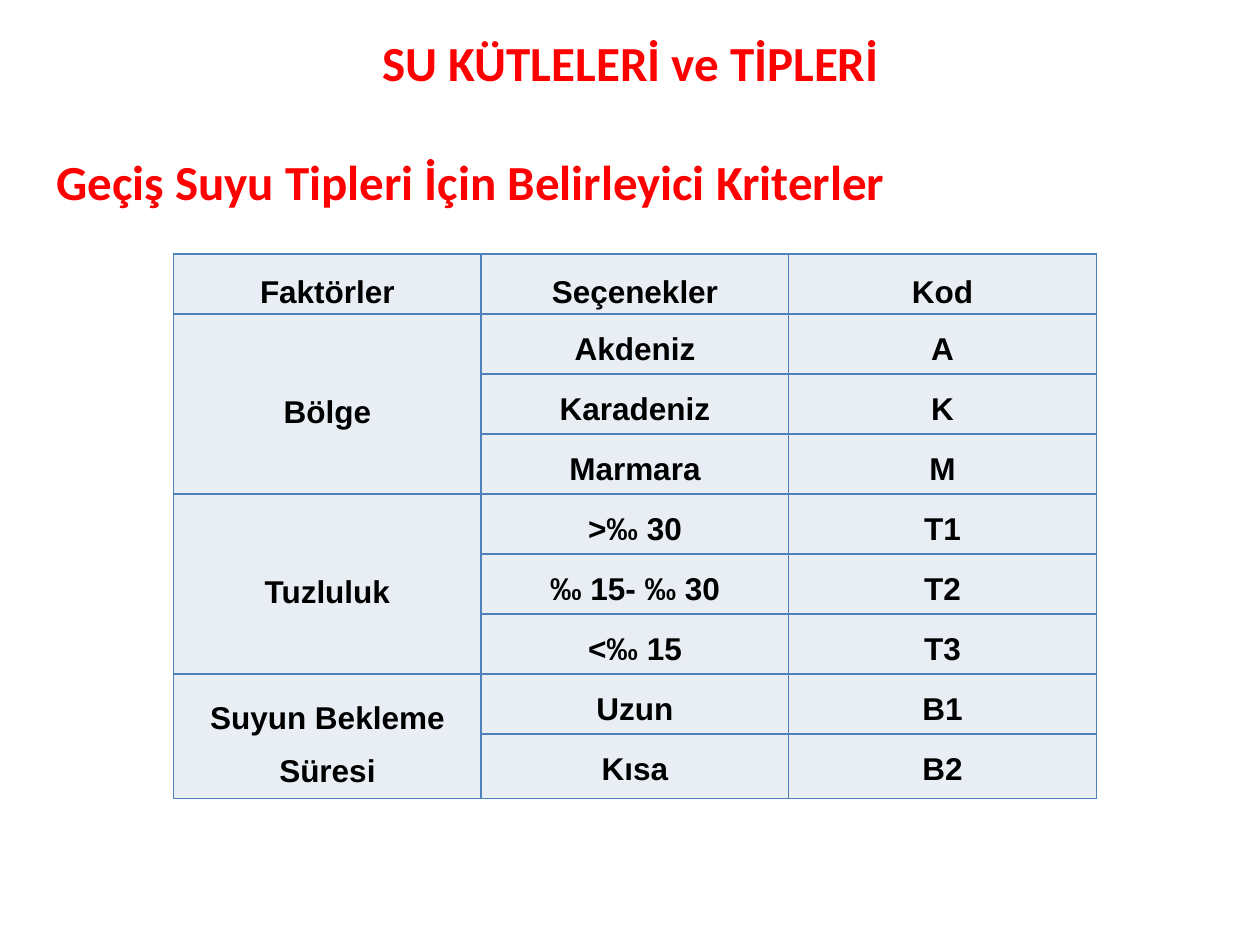
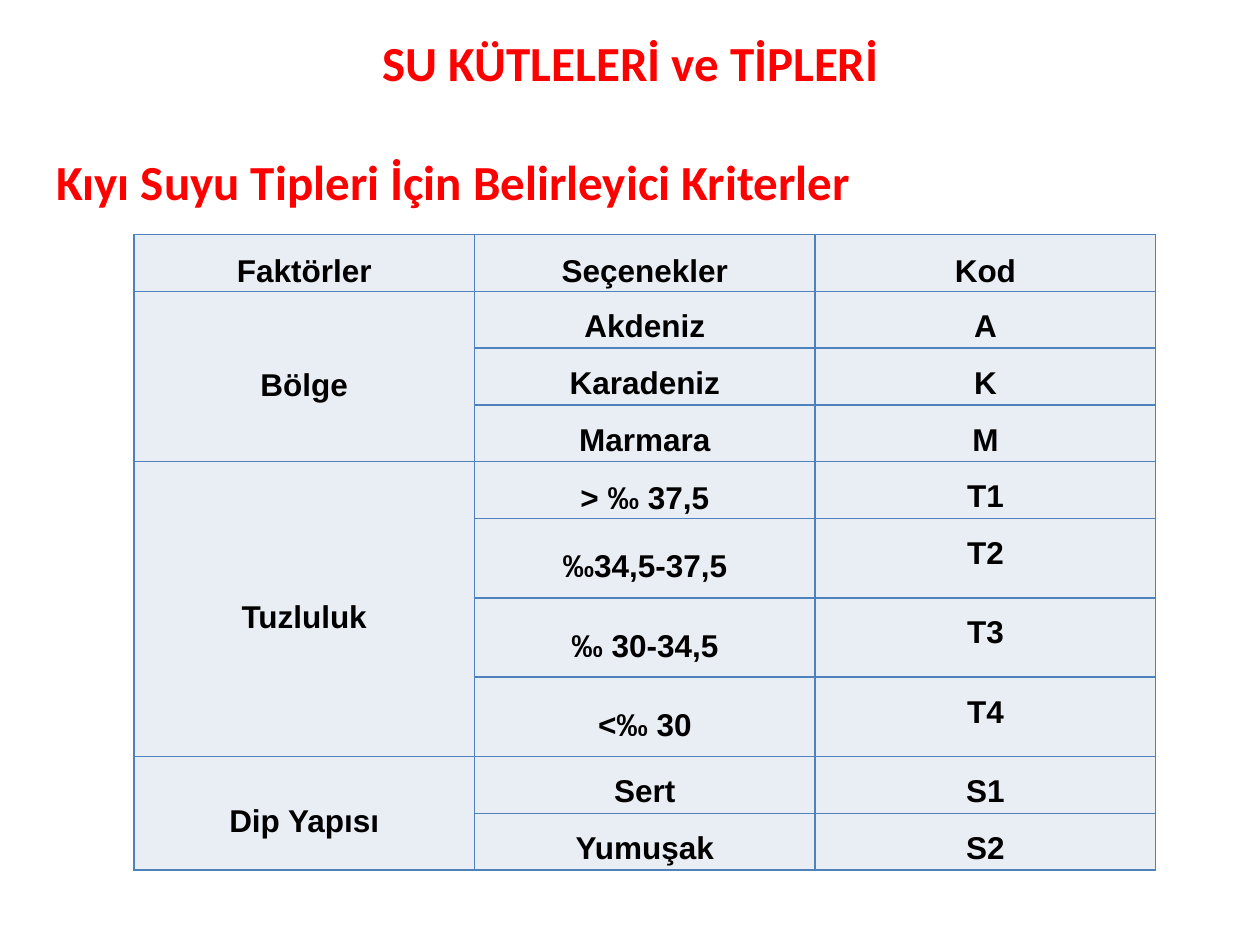
from dataclasses import dataclass

from lxml.etree import SubElement
from pptx import Presentation
from pptx.dml.color import RGBColor as RGB
from pptx.enum.text import MSO_ANCHOR as ANCHOR, MSO_AUTO_SIZE as AUTO, PP_ALIGN as ALIGN
from pptx.oxml.ns import qn
from pptx.util import Cm, Pt


@dataclass(frozen=True)
class Theme:
    """Colours, fonts and type sizes shared by the slides."""
    heading: str = "FF0000"
    text: str = "000000"
    cell: str = "E9EDF4"
    border: str = "4F81BD"
    heading_font: str = "Calibri"
    table_font: str = "Arial"
    heading_size: int = 28
    table_size: int = 18
    line_spacing: float = 1.5
    border_width: int = 1


THEME = Theme()
TITLE = "SU KÜTLELERİ ve TİPLERİ"
TITLE_BOX = (3.5, 0.53, 18.42, 1.45)
SUBTITLE_BOX = (0.89, 2.92, 20.19, 1.45)
HEADER = ("Faktörler", "Seçenekler", "Kod")
REGIONS = ("Bölge", [("Akdeniz", "A"), ("Karadeniz", "K"), ("Marmara", "M")])


def add_run(p, text, font, size, colour):
    """Add one bold run to a paragraph."""
    r = p.add_run()
    r.text = text
    r.font.name = font
    r.font.size = Pt(size)
    r.font.bold = True
    r.font.color.rgb = RGB.from_string(colour)


def set_heading(sp, box, text, align):
    """Place a heading shape in its box and write its text."""
    sp.left, sp.top, sp.width, sp.height = map(Cm, box)
    tf = sp.text_frame
    tf.word_wrap = True
    tf.auto_size = AUTO.SHAPE_TO_FIT_TEXT
    tf.vertical_anchor = ANCHOR.TOP
    p = tf.paragraphs[0]
    p.alignment = align
    add_run(p, text, THEME.heading_font, THEME.heading_size, THEME.heading)


def style_cell(cell):
    """Give a cell its borders, fill and margins."""
    props = cell._tc.get_or_add_tcPr()
    for side in ("a:lnL", "a:lnR", "a:lnT", "a:lnB"):
        line = SubElement(props, qn(side), w=str(Pt(THEME.border_width)))
        SubElement(SubElement(line, qn("a:solidFill")), qn("a:srgbClr"), val=THEME.border)
    cell.fill.solid()
    cell.fill.fore_color.rgb = RGB.from_string(THEME.cell)
    cell.margin_left = cell.margin_right = Cm(0.18)
    cell.margin_top = cell.margin_bottom = 0


def write_cell(cell, text, anchor=ANCHOR.TOP):
    """Write centred text in a cell."""
    cell.vertical_anchor = anchor
    p = cell.text_frame.paragraphs[0]
    p.alignment = ALIGN.CENTER
    p.line_spacing = THEME.line_spacing
    add_run(p, text, THEME.table_font, THEME.table_size, THEME.text)


def add_criteria_table(s, left, top, width, heights, factors, centred):
    """Draw the factors with their options and codes; options of centred factors sit mid-cell."""
    box = map(Cm, (left, top, width, sum(heights)))
    table = s.shapes.add_table(len(heights), len(HEADER), *box).table
    table.first_row = table.horz_banding = False
    for row, height in zip(table.rows, heights):
        row.height = Cm(height)
    for cell in table.iter_cells():
        style_cell(cell)
    for col, text in enumerate(HEADER):
        write_cell(table.cell(0, col), text, ANCHOR.MIDDLE)
    first = 1
    for factor, options in factors:
        last = first + len(options) - 1
        table.cell(first, 0).merge(table.cell(last, 0))
        write_cell(table.cell(first, 0), factor, ANCHOR.MIDDLE)
        anchor = ANCHOR.MIDDLE if factor in centred else ANCHOR.TOP
        for row, (option, code) in enumerate(options, first):
            write_cell(table.cell(row, 1), option, anchor)
            write_cell(table.cell(row, 2), code)
        first = last + 1


def add_criteria_slide(prs, subtitle, left, top, width, heights, factors, centred=()):
    """Add a titled slide with one criteria table."""
    s = prs.slides.add_slide(prs.slide_layouts[5])
    set_heading(s.shapes.title, TITLE_BOX, TITLE, ALIGN.CENTER)
    set_heading(s.shapes.add_textbox(0, 0, 0, 0), SUBTITLE_BOX, subtitle, ALIGN.LEFT)
    add_criteria_table(s, left, top, width, heights, factors, centred)


def main():
    """Build and save the presentation."""
    prs = Presentation()
    prs.slide_width, prs.slide_height = Cm(25.4), Cm(19.05)
    transitional = [
        REGIONS,
        ("Tuzluluk", [(">‰ 30", "T1"), ("‰ 15- ‰ 30", "T2"), ("<‰ 15", "T3")]),
        ("Suyun Bekleme Süresi", [("Uzun", "B1"), ("Kısa", "B2")]),
    ]
    coastal = [
        REGIONS,
        ("Tuzluluk", [("> ‰ 37,5", "T1"), ("‰34,5-37,5", "T2"),
                      ("‰ 30-34,5", "T3"), ("<‰ 30", "T4")]),
        ("Dip Yapısı", [("Sert", "S1"), ("Yumuşak", "S2")]),
    ]
    add_criteria_slide(prs, "Geçiş Suyu Tipleri İçin Belirleyici Kriterler",
                       3.5, 5.12, 18.6, [1.21] * 8 + [1.3], transitional)
    add_criteria_slide(prs, "Kıyı Suyu Tipleri İçin Belirleyici Kriterler",
                       2.7, 4.73, 20.6, [1.14] * 5 + [1.6] * 3 + [1.14] * 2,
                       coastal, centred=("Tuzluluk",))
    prs.save("out.pptx")


if __name__ == "__main__":
    main()
